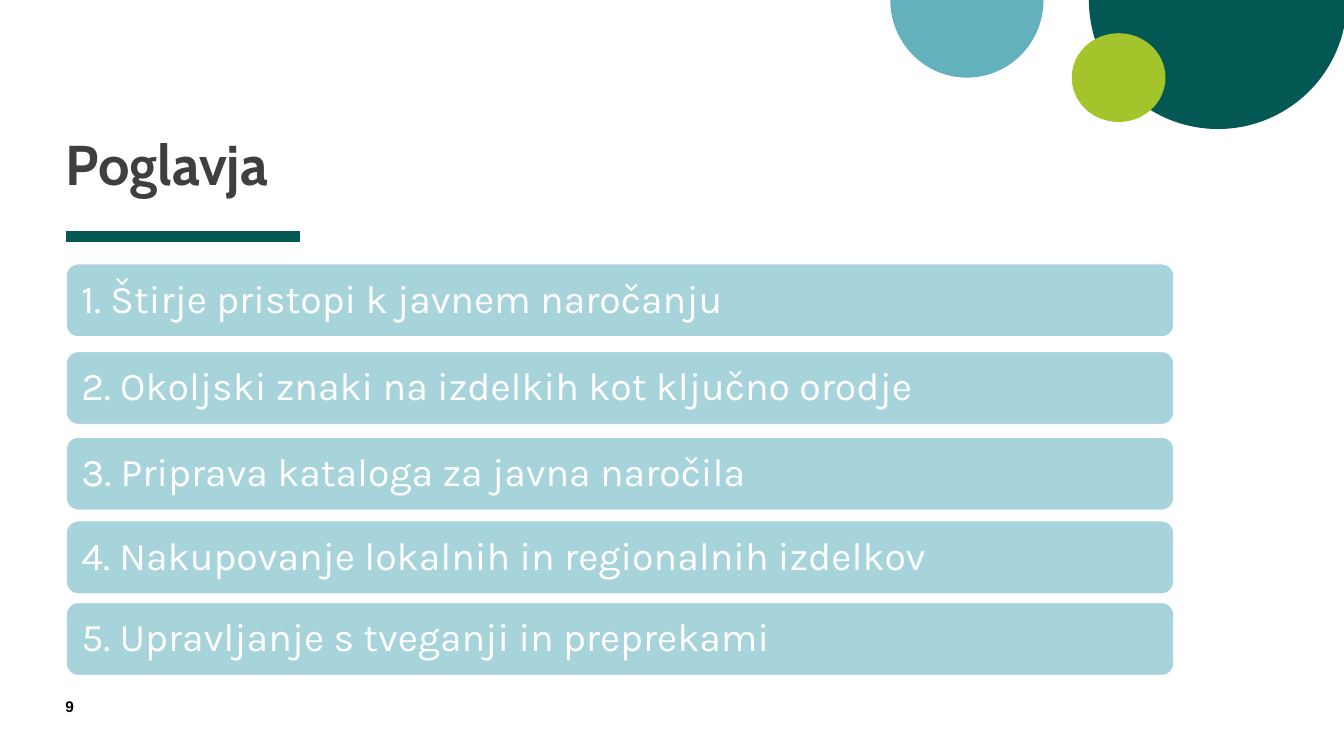
from lxml.etree import SubElement
from pptx import Presentation
from pptx.dml.color import RGBColor
from pptx.enum.shapes import MSO_CONNECTOR, MSO_SHAPE
from pptx.enum.text import MSO_ANCHOR, PP_ALIGN
from pptx.oxml.ns import qn
from pptx.util import Inches, Pt

DARK_GREEN, LIME, TEAL, PALE_TEAL = "035854", "A3C42A", "64B1BE", "A7D3DA"
LEFT = 0.65


def paint(color_format, hex_color):
    color_format.rgb = RGBColor.from_string(hex_color)


def write(shape, text, font, size, color, bold=False, anchor=MSO_ANCHOR.TOP,
          side=0, spacing=1.0):
    frame = shape.text_frame
    frame.word_wrap = True
    frame.vertical_anchor = anchor
    frame.margin_left = frame.margin_right = Inches(side)
    frame.margin_top = frame.margin_bottom = 0
    paragraph = frame.paragraphs[0]
    paragraph.alignment = PP_ALIGN.LEFT
    paragraph.line_spacing = spacing
    run = paragraph.add_run()
    run.text = text
    run.font.name = font
    run.font.size = Pt(size)
    run.font.bold = bold
    paint(run.font.color, color)


deck = Presentation()
deck.slide_width, deck.slide_height = Inches(13.33), Inches(7.5)
slide = deck.slides.add_slide(deck.slide_layouts[6])
shapes = slide.shapes

# Circles in the top corner; the half discs hang from the slide's edge
HALF_TURN = 108
circles = [
    (MSO_SHAPE.PIE, 10.8, -1.28, 2.56, 2.56, DARK_GREEN),
    (MSO_SHAPE.PIE, 8.83, -0.77, 1.52, 1.54, TEAL),
    (MSO_SHAPE.OVAL, 10.63, 0.33, 0.93, 0.88, LIME),
]
for outline, *box, color in circles:
    circle = shapes.add_shape(outline, *map(Inches, box))
    circle.shadow.inherit = False
    circle.fill.solid()
    paint(circle.fill.fore_color, color)
    circle.line.fill.background()
    if outline == MSO_SHAPE.PIE:
        circle.adjustments[0] = 0
        circle.adjustments[1] = HALF_TURN

# Title and the rule below it
title = shapes.add_textbox(*map(Inches, (LEFT, 0.21, 8.39, 1.74)))
write(title, "Poglavja", "Cabin", 40, "3F3F3F", bold=True,
      anchor=MSO_ANCHOR.BOTTOM, spacing=0.8)

title_rule = shapes.add_connector(
    MSO_CONNECTOR.STRAIGHT, *map(Inches, (LEFT, 2.35, 2.98, 2.35)))
paint(title_rule.line.color, DARK_GREEN)
title_rule.line.width = Pt(8)
SubElement(title_rule._element.spPr, qn("a:effectLst"))

# Chapter bars: each step down is 0.02 shorter than the one before
chapters = [
    "Štirje pristopi k javnem naročanju",
    "Okoljski znaki na izdelkih kot ključno orodje",
    "Priprava kataloga za javna naročila",
    "Nakupovanje lokalnih in regionalnih izdelkov",
    "Upravljanje s tveganji in preprekami",
]
FIRST_TOP, FIRST_STEP, STEP_LOSS = 2.61, 0.87, 0.02
top, step = FIRST_TOP, FIRST_STEP
for number, chapter in enumerate(chapters, start=1):
    bar = shapes.add_shape(MSO_SHAPE.ROUNDED_RECTANGLE,
                           *map(Inches, (LEFT, top, 11, 0.74)))
    bar.shadow.inherit = False
    bar.adjustments[0] = 0.17
    bar.fill.solid()
    paint(bar.fill.fore_color, PALE_TEAL)
    paint(bar.line.color, "FFFFFF")
    bar.line.width = Pt(2)
    write(bar, f"{number}. {chapter}", "Karla", 28, "FFFFFF",
          anchor=MSO_ANCHOR.MIDDLE, side=0.12, spacing=0.9)
    top += step
    step -= STEP_LOSS

# Page number
page_number = shapes.add_textbox(*map(Inches, (LEFT, 6.92, 0.57, 0.27)))
write(page_number, "9", "Arial", 11, "000000", bold=True)

deck.save("out.pptx")
